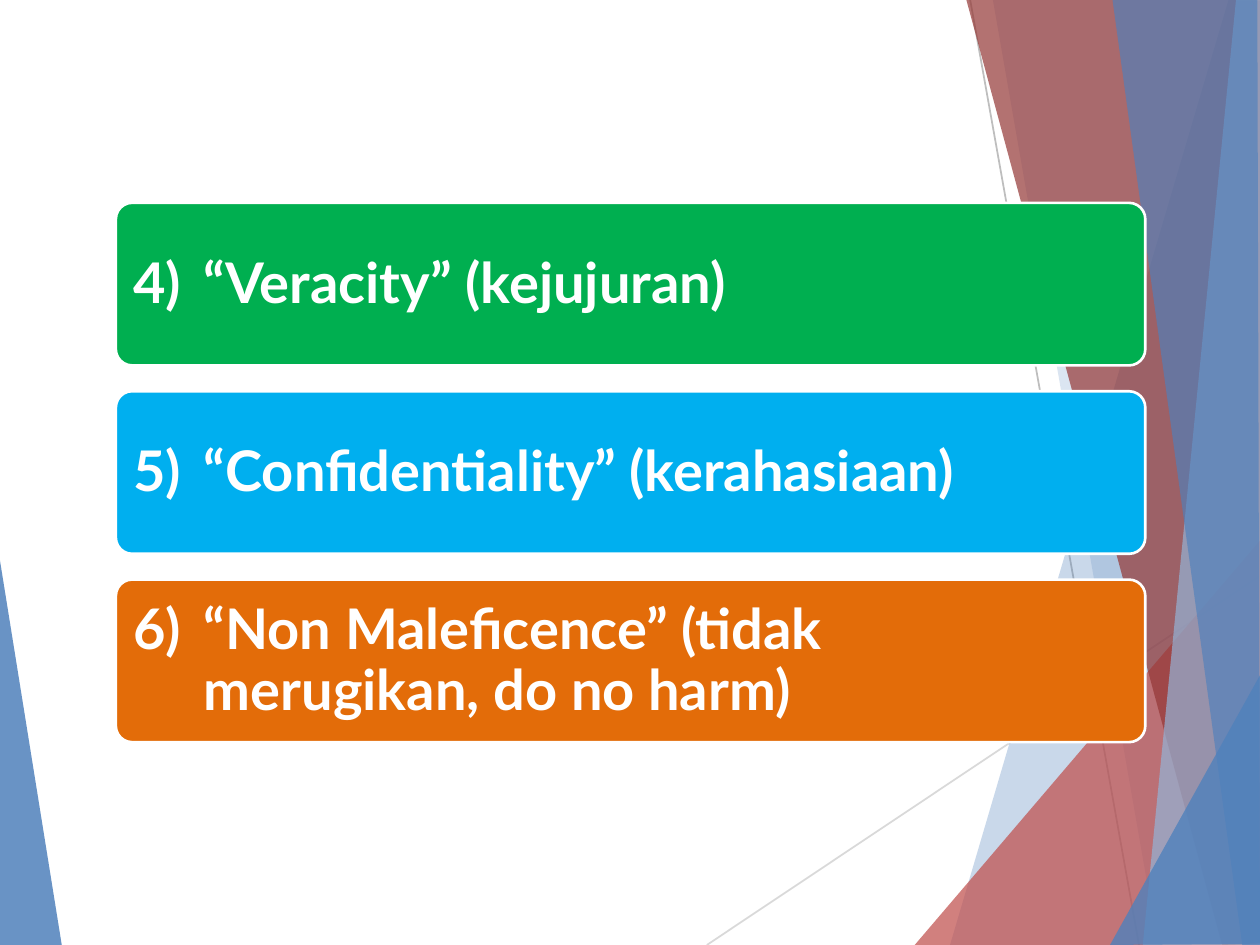
from dataclasses import dataclass

from pptx import Presentation
from pptx.dml.color import RGBColor
from pptx.enum.shapes import MSO_CONNECTOR as Connector, MSO_SHAPE as Preset
from pptx.enum.text import MSO_ANCHOR as Anchor, PP_ALIGN as Align
from pptx.oxml.ns import qn
from pptx.util import Inches, Pt
from lxml.etree import SubElement


@dataclass(frozen=True)
class Theme:
    font: str = "Lato"
    size: int = 32
    line_pitch: float = 34.6
    white: str = "FFFFFF"
    blue: str = "4F81BC"
    pale_blue: str = "94B3D6"
    red: str = "C0504D"
    dark_red: str = "943735"
    light_gray: str = "D9D9D9"
    gray: str = "BEBEBE"
    green: str = "00AF50"
    sky: str = "00AFEF"
    orange: str = "E36C09"


THEME = Theme()
CARD_LEFT, CARD_TOP, CARD_WIDTH, CARD_HEIGHT = 0.92, 1.61, 8.17, 1.29
CARD_PITCH = 1.495
FIRST_NUMBER = 4

LEFT_FACET = ([(0, 4.45), (0, 7.5), (0.49, 7.5)], THEME.blue, 85)
RIGHT_FACETS = [
    ([(9.75, 0), (7.54, 7.5), (10, 7.5), (10, 0.01)], THEME.blue, 30),
    ([(10, 0), (7.88, 0), (9.19, 7.5), (10, 7.5)], THEME.blue, 20),
    ([(10, 4.29), (7.26, 7.5), (10, 7.5)], THEME.red, 72),
    ([(10, 0), (7.67, 0), (9.7, 7.5), (10, 7.49)], THEME.dark_red, 70),
    ([(10, 0), (9.81, 0), (9.07, 7.5), (10, 7.5)], THEME.pale_blue, 70),
    ([(9.98, 0), (8.83, 0), (9.86, 7.5), (10, 7.5), (9.98, 0.27)], THEME.blue, 65),
    ([(10, 5.36), (8.81, 7.5), (10, 7.49)], THEME.blue, 80),
]
RAYS = [
    ((5.61, 7.5), (10, 4.57), THEME.light_gray),
    ((7.7, 0), (9.04, 7.5), THEME.gray),
]
PRINCIPLES = [
    ("“Veracity” (kejujuran)", THEME.green),
    ("“Confidentiality” (kerahasiaan)", THEME.sky),
    ("“Non Maleficence” (tidak merugikan, do no harm)", THEME.orange),
]


def color(code):
    return RGBColor.from_string(code)


def fill_solid(shape, code):
    shape.shadow.inherit = False
    shape.fill.solid()
    shape.fill.fore_color.rgb = color(code)


def add_facet(page, points, code, opacity):
    corners = [(Inches(x), Inches(y)) for x, y in points]
    builder = page.shapes.build_freeform(*corners[0])
    builder.add_line_segments(corners[1:], close=True)
    facet = builder.convert_to_shape()
    fill_solid(facet, code)
    facet.line.fill.background()
    tint = facet.element.spPr.find(qn("a:solidFill")).find(qn("a:srgbClr"))
    SubElement(tint, qn("a:alpha"), val=str(opacity * 1000))


def add_ray(page, start, end, code):
    ends = [Inches(value) for value in (*start, *end)]
    ray = page.shapes.add_connector(Connector.STRAIGHT, *ends)
    ray.line.color.rgb = color(code)
    ray.line.width = Pt(1)
    SubElement(ray.element.spPr, qn("a:effectLst"))


def number_paragraph(para, number):
    settings = para._p.get_or_add_pPr()
    settings.set("marL", str(Inches(0.57)))
    settings.set("indent", str(-Inches(0.56)))
    SubElement(settings, qn("a:buFont"), typeface=THEME.font)
    SubElement(settings, qn("a:buAutoNum"), type="arabicParenR", startAt=str(number))


def add_card(page, index, text, code):
    top = CARD_TOP + index * CARD_PITCH
    card = page.shapes.add_shape(
        Preset.ROUNDED_RECTANGLE,
        Inches(CARD_LEFT), Inches(top), Inches(CARD_WIDTH), Inches(CARD_HEIGHT),
    )
    card.adjustments[0] = 0.1
    fill_solid(card, code)
    card.line.color.rgb = color(THEME.white)
    card.line.width = Pt(1.5)

    frame = card.text_frame
    frame.word_wrap = True
    frame.vertical_anchor = Anchor.MIDDLE
    frame.margin_left, frame.margin_right = Inches(0.09), Inches(0.96)
    frame.margin_top = frame.margin_bottom = 0

    para = frame.paragraphs[0]
    para.text = text
    para.alignment = Align.LEFT
    para.line_spacing = Pt(THEME.line_pitch)
    number_paragraph(para, FIRST_NUMBER + index)
    para.font.name = THEME.font
    para.font.size = Pt(THEME.size)
    para.font.bold = True
    para.font.color.rgb = color(THEME.white)


def main():
    deck = Presentation()
    deck.slide_width, deck.slide_height = Inches(10), Inches(7.5)
    page = deck.slides.add_slide(deck.slide_layouts[6])
    add_facet(page, *LEFT_FACET)
    for ray in RAYS:
        add_ray(page, *ray)
    for facet in RIGHT_FACETS:
        add_facet(page, *facet)
    for index, (text, code) in enumerate(PRINCIPLES):
        add_card(page, index, text, code)
    deck.save("out.pptx")


if __name__ == "__main__":
    main()
